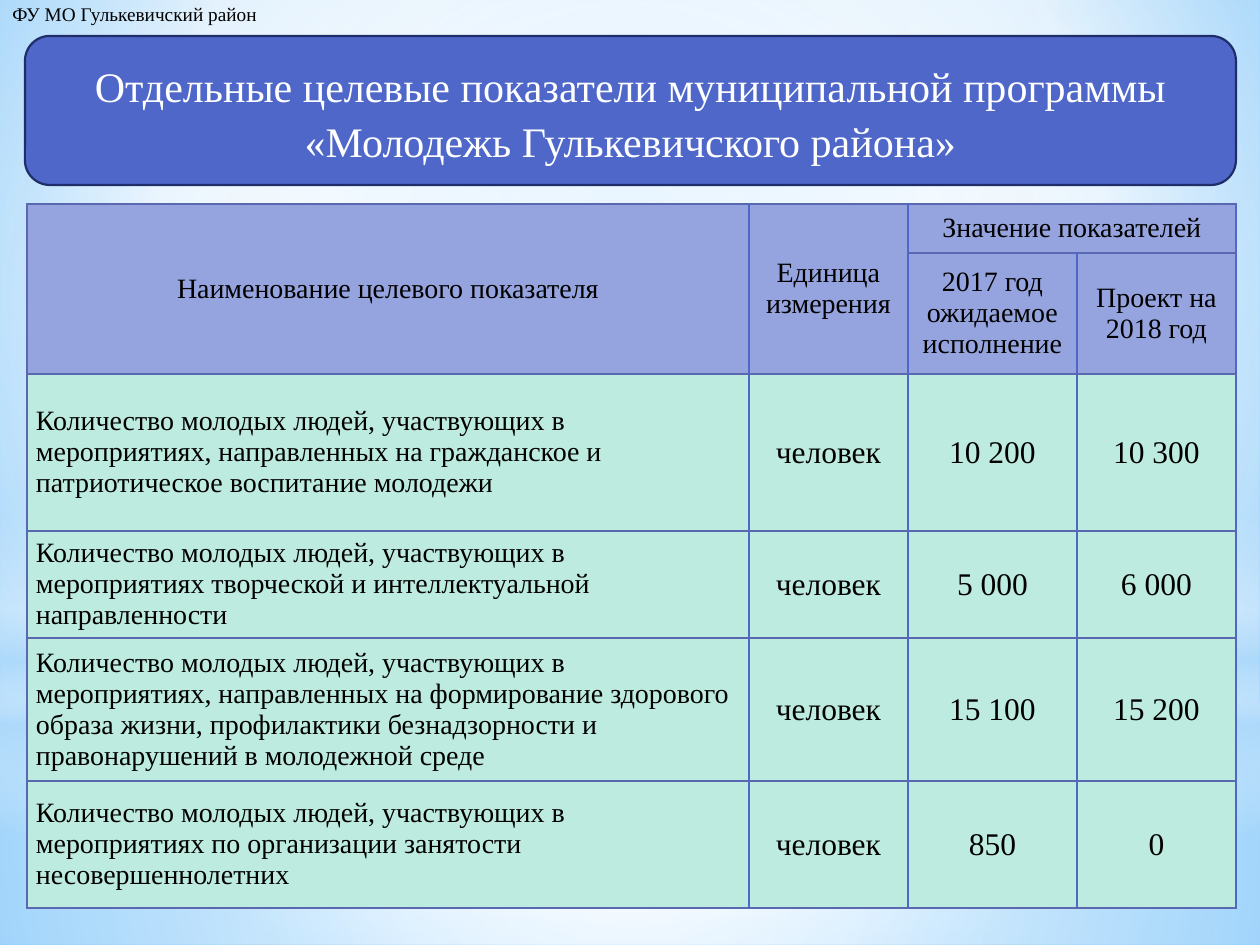
from dataclasses import dataclass
from typing import NamedTuple

from lxml import etree
from pptx import Presentation
from pptx.dml.color import RGBColor
from pptx.enum.shapes import MSO_SHAPE
from pptx.enum.text import MSO_ANCHOR, MSO_AUTO_SIZE, PP_ALIGN
from pptx.oxml.ns import nsdecls, qn
from pptx.oxml import parse_xml
from pptx.util import Emu, Pt

PX_PER_INCH = 126
FONT = "Times New Roman"
BLACK, WHITE = "000000", "FFFFFF"
BLUE, NAVY, RULE = "4E67C8", "1F2E69", "5968B0"
HEADER_FILL, BODY_FILL = "95A4DE", "BEEBDF"
GLOW, SKY, AZURE = "B4DCFA", "9ED5FF", "5BB9FF"


class Stop(NamedTuple):
    position: int
    color: str
    opacity: int = 100


@dataclass
class Haze:
    preset: MSO_SHAPE
    top: int
    height: int
    stops: list[Stop]
    radial: bool = True


@dataclass
class Indicator:
    name: str
    expected: str
    project: str
    unit: str = "человек"


HAZES = [
    Haze(MSO_SHAPE.RECTANGLE, 703, 242,
         [Stop(0, WHITE, 91), Stop(37, WHITE, 76), Stop(100, GLOW, 79)]),
    Haze(MSO_SHAPE.RECTANGLE, 0, 703,
         [Stop(0, WHITE, 89), Stop(48, WHITE, 62), Stop(100, GLOW, 79)]),
    Haze(MSO_SHAPE.RECTANGLE, 519, 315,
         [Stop(0, WHITE, 0), Stop(29, WHITE, 30), Stop(45, GLOW, 40),
          Stop(55, WHITE, 26), Stop(65, GLOW, 60), Stop(100, WHITE, 0)], radial=False),
    Haze(MSO_SHAPE.OVAL, 220, 703, [Stop(0, WHITE), Stop(56, WHITE, 0)]),
]

INDICATORS = [
    Indicator("Количество молодых людей, участвующих в мероприятиях, направленных на "
              "гражданское и патриотическое воспитание молодежи", "10 200", "10 300"),
    Indicator("Количество молодых людей, участвующих в мероприятиях творческой и "
              "интеллектуальной направленности", "5 000", "6 000"),
    Indicator("Количество молодых людей, участвующих в мероприятиях, направленных на "
              "формирование здорового образа жизни, профилактики безнадзорности и "
              "правонарушений в молодежной среде", "15 100", "15 200"),
    Indicator("Количество молодых людей, участвующих в мероприятиях по организации "
              "занятости несовершеннолетних", "850", "0"),
]
HEADER = [
    ["Наименование целевого показателя", "Единица\nизмерения", "Значение показателей", ""],
    ["", "", "2017 год ожидаемое исполнение", "Проект на 2018 год"],
]
HEADER_SPANS = [((0, 0), (1, 0)), ((0, 1), (1, 1)), ((0, 2), (0, 3))]
COLUMN_WIDTHS = [722, 159, 169, 159]
ROW_HEIGHTS = [49, 121, 157, 107, 143, 127]


def px(length: int) -> Emu:
    return Emu(round(length * 914400 / PX_PER_INCH))


def rgb(color: str) -> RGBColor:
    return RGBColor.from_string(color)


def gradient(stops: list[Stop], focus: tuple | None = None):
    """Radial around the focus rectangle (left, top, right, bottom), else top to bottom."""
    marks = "".join(
        f'<a:gs pos="{s.position * 1000}"><a:srgbClr val="{s.color}">'
        f'<a:alpha val="{s.opacity * 1000}"/></a:srgbClr></a:gs>' for s in stops)
    if focus:
        sides = " ".join(f'{side}="{v * 1000}"' for side, v in zip("ltrb", focus))
        course = f'<a:path path="circle"><a:fillToRect {sides}/></a:path>'
    else:
        course = '<a:lin ang="5400000" scaled="0"/>'
    return parse_xml(f'<a:gradFill {nsdecls("a")} rotWithShape="1">'
                     f'<a:gsLst>{marks}</a:gsLst>{course}</a:gradFill>')


def replace_solid(parent, fill) -> None:
    parent.replace(parent.find(qn("a:solidFill")), fill)


def write(frame, text: str, size: int, color: str, align=PP_ALIGN.LEFT) -> None:
    frame.text = text
    for paragraph in frame.paragraphs:
        paragraph.alignment = align
        for run in paragraph.runs:
            run.font.name, run.font.size = FONT, Pt(size)
            run.font.color.rgb = rgb(color)


def draw_background(slide) -> None:
    slide.background.fill.solid()
    slide.background.fill.fore_color.rgb = rgb(WHITE)
    replace_solid(slide.element.find(".//" + qn("p:bgPr")),
                  gradient([Stop(0, SKY), Stop(60, WHITE), Stop(100, AZURE)], (20, 10, 20, 60)))


def draw_haze(slide, haze: Haze) -> None:
    cloud = slide.shapes.add_shape(haze.preset, 0, px(haze.top), px(1260), px(haze.height))
    cloud.shadow.inherit = False
    cloud.line.fill.background()
    cloud.fill.solid()
    focus = (50, 50, 50, 50) if haze.radial else None
    replace_solid(cloud.element.spPr, gradient(haze.stops, focus))


def set_borders(cell, left: str) -> None:
    properties = cell._tc.get_or_add_tcPr()
    sides = [("lnL", left), ("lnR", BLUE), ("lnT", RULE), ("lnB", RULE)]
    for index, (side, color) in enumerate(sides):
        border = etree.Element(qn(f"a:{side}"), w=str(Pt(1)))
        paint = etree.SubElement(border, qn("a:solidFill"))
        etree.SubElement(paint, qn("a:srgbClr"), val=color)
        properties.insert(index, border)


def draw_table(slide) -> None:
    rows = HEADER + [[i.name, i.unit, i.expected, i.project] for i in INDICATORS]
    table = slide.shapes.add_table(len(rows), len(COLUMN_WIDTHS), px(27), px(204),
                                   px(sum(COLUMN_WIDTHS)), px(sum(ROW_HEIGHTS))).table
    table.first_row = table.horz_banding = False
    for column, width in zip(table.columns, COLUMN_WIDTHS):
        column.width = px(width)
    for row, height in zip(table.rows, ROW_HEIGHTS):
        row.height = px(height)

    for r, texts in enumerate(rows):
        is_header = r < len(HEADER)
        for c, text in enumerate(texts):
            cell = table.cell(r, c)
            is_name = c == 0 and not is_header
            write(cell.text_frame, text, 16 if is_header or is_name else 18, BLACK,
                  PP_ALIGN.LEFT if is_name else PP_ALIGN.CENTER)
            cell.vertical_anchor = MSO_ANCHOR.MIDDLE
            if not is_header:
                cell.margin_left = cell.margin_right = px(9)
                cell.margin_top = cell.margin_bottom = 0
            cell.fill.solid()
            cell.fill.fore_color.rgb = rgb(HEADER_FILL if is_header else BODY_FILL)
            set_borders(cell, RULE if c == 0 else BLUE)
    for first, last in HEADER_SPANS:
        table.cell(*first).merge(table.cell(*last))


def draw_department(slide) -> None:
    department = slide.shapes.add_textbox(0, px(-4), px(275), px(37)).text_frame
    department.word_wrap = False
    department.auto_size = MSO_AUTO_SIZE.SHAPE_TO_FIT_TEXT
    write(department, "ФУ МО Гулькевичский район", 11, BLACK)


def draw_title(slide) -> None:
    banner = slide.shapes.add_shape(MSO_SHAPE.ROUNDED_RECTANGLE,
                                    px(25), px(36), px(1211), px(149))
    banner.shadow.inherit = False
    banner.fill.solid()
    banner.fill.fore_color.rgb = rgb(BLUE)
    banner.line.color.rgb = rgb(NAVY)
    banner.line.width = Pt(1.25)
    title = banner.text_frame
    title.word_wrap = True
    title.vertical_anchor = MSO_ANCHOR.MIDDLE
    write(title, "Отдельные целевые показатели муниципальной программы "
          "«Молодежь Гулькевичского района»", 24, WHITE, PP_ALIGN.CENTER)
    title.paragraphs[0].line_spacing = 1.1


def main() -> None:
    deck = Presentation()
    deck.slide_width, deck.slide_height = px(1260), px(945)
    slide = deck.slides.add_slide(deck.slide_layouts[6])
    # Sky backdrop
    draw_background(slide)
    for haze in HAZES:
        draw_haze(slide, haze)
    # Content
    draw_department(slide)
    draw_table(slide)
    draw_title(slide)
    deck.save("out.pptx")


if __name__ == "__main__":
    main()
